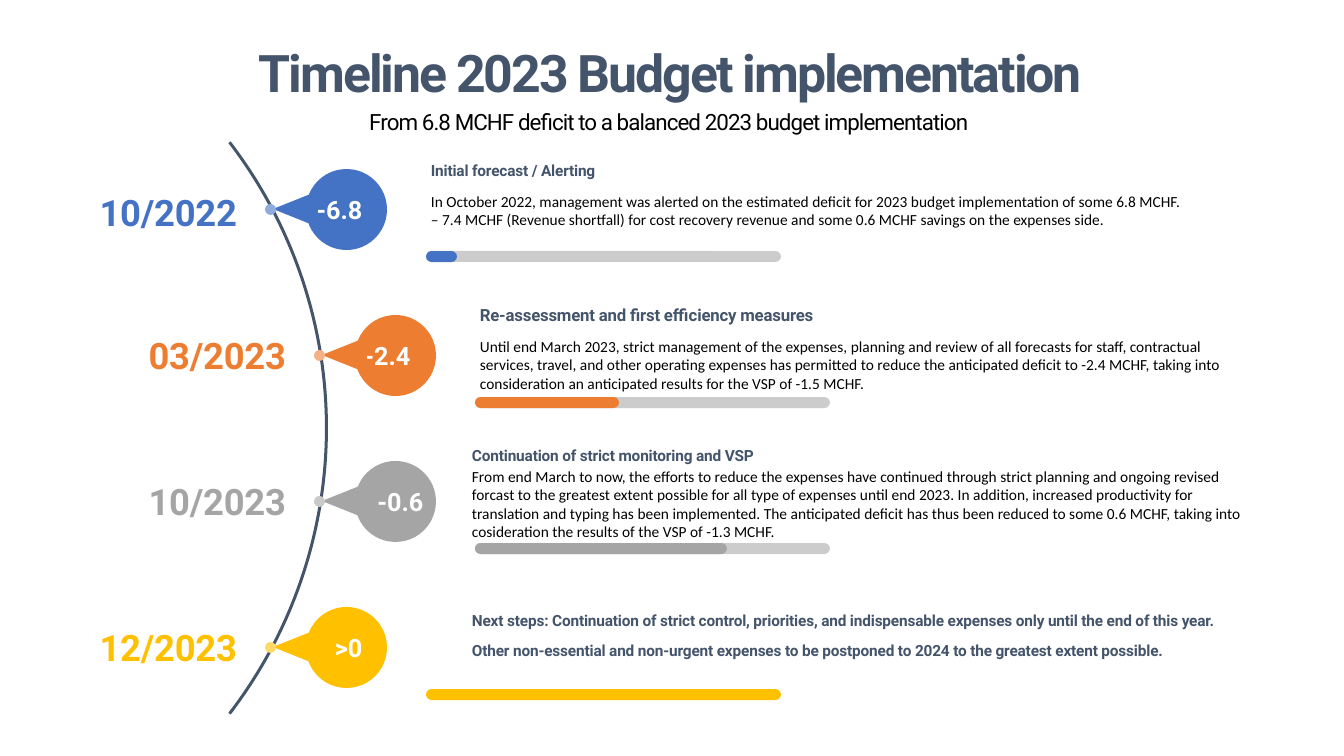
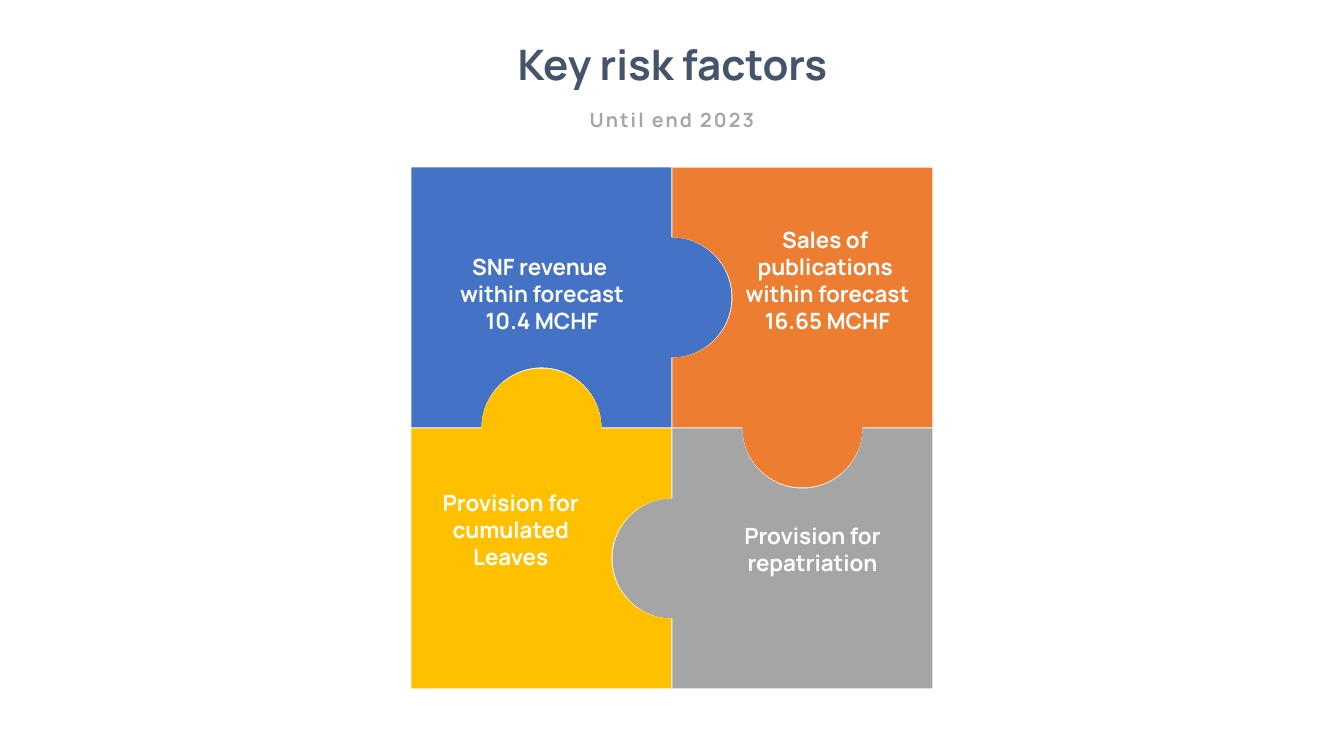
"""Builds a two-slide budget deck: a curved timeline and a risk puzzle."""
import math

from pptx import Presentation, util as u
from pptx.dml.color import RGBColor
from pptx.enum import shapes, text
from pptx.oxml import ns

SCALE = 914400 / 100.8
TITLE_ONLY = 5
COLORS = {
    "navy": "44546A", "black": "000000", "white": "FFFFFF",
    "track": "CCCCCC", "muted": "A6A6A6",
    "blue": "4472C4", "orange": "ED7D31", "gray": "A5A5A5", "gold": "FFC000",
    "light blue": "8FAADC", "light orange": "F4B183",
    "light gray": "C9C9C9", "light gold": "FFD966",
}
BAR_WIDTH = 355
FIRST_Y, ROW_STEP = 209, 146
MILESTONES = [
    {"date": "10/2022", "date_y": 185, "value": "-6.8", "shift": -7,
     "color": "blue", "dot_x": 270, "done": 31, "text_x": 421, "size": 11,
     "heading": "Initial forecast / Alerting",
     "heading_y": 147, "heading_width": 197, "body_y": 187, "body_lines": 2,
     "body": "In October 2022, management was alerted on the estimated deficit "
             "for 2023 budget implementation of some 6.8 MCHF.\n"
             "– 7.4 MCHF (Revenue shortfall) for cost recovery revenue and "
             "some 0.6 MCHF savings on the expenses side."},
    {"date": "03/2023", "date_y": 328, "value": "-2.4", "shift": -8,
     "color": "orange", "dot_x": 319, "done": 144, "text_x": 470, "size": 12,
     "heading": "Re-assessment and first efficiency measures",
     "heading_y": 292, "heading_width": 382, "body_y": 332, "body_lines": 3,
     "body": "Until end March 2023, strict management of the expenses, planning "
             "and review of all forecasts for staff, contractual services, "
             "travel, and other operating expenses has permitted to reduce the "
             "anticipated deficit to -2.4 MCHF, taking into consideration an "
             "anticipated results for the VSP of -1.5 MCHF."},
    {"date": "10/2023", "date_y": 474, "value": "-0.6", "shift": 5,
     "color": "gray", "dot_x": 319, "done": 252, "text_x": 462, "size": 11,
     "heading": "Continuation of strict monitoring and VSP",
     "heading_y": 432, "heading_width": 325, "body_y": 462, "body_lines": 4,
     "body": "From end March to now, the efforts to reduce the expenses have "
             "continued through strict planning and ongoing revised forcast to "
             "the greatest extent possible for all type of expenses until end "
             "2023. In addition, increased productivity for translation and "
             "typing has been implemented. The anticipated deficit has thus "
             "been reduced to some 0.6 MCHF, taking into cosideration the "
             "results of the VSP of -1.3 MCHF."},
    {"date": "12/2023", "date_y": 620, "value": ">0", "shift": 2,
     "color": "gold", "dot_x": 270, "done": BAR_WIDTH, "text_x": 462, "size": 11,
     "heading": "Next steps: Continuation of strict control, priorities, and "
                "indispensable expenses only until the end of this year.\n"
                "Other non-essential and non-urgent expenses to be postponed "
                "to 2024 to the greatest extent possible.",
     "heading_y": 597, "heading_width": 826, "body": None},
]
RISKS = [
    ("blue", (443, 247, 198, 92), "SNF revenue \nwithin forecast\n10.4 MCHF"),
    ("orange", (730, 220, 195, 119),
     "Sales of \npublications \nwithin forecast\n16.65 MCHF"),
    ("gray", (730, 516, 165, 65), "Provision for\nrepatriation"),
    ("gold", (428, 483, 170, 92), "Provision for \ncumulated \nLeaves "),
]


def px(length):
    """Turn px into EMU."""
    return u.Emu(round(length * SCALE))


def rgb(name):
    """Look up a named colour."""
    return RGBColor.from_string(COLORS[name])


def write(frame, words, size, color, font="Roboto", bold=True, align="LEFT",
          anchor="TOP", spacing=0, line_height=None):
    """Fill a text frame and format every run in it."""
    frame.text = words
    frame.auto_size = text.MSO_AUTO_SIZE.NONE
    frame.vertical_anchor = text.MSO_ANCHOR[anchor]
    for para in frame.paragraphs:
        para.alignment = text.PP_ALIGN[align]
        if line_height:
            para.line_spacing = u.Pt(line_height)
        for span in para.runs:
            span.font.name = font
            span.font.size = u.Pt(size)
            span.font.bold = bold
            span.font.color.rgb = rgb(color)
            if spacing:
                span.font._element.set("spc", str(round(spacing * 100)))


def add_text(page, area, words, size, color, **style):
    """Add a wrapping text box."""
    box = page.shapes.add_textbox(*map(px, area))
    box.text_frame.word_wrap = True
    write(box.text_frame, words, size, color, **style)


def add_page(deck, title, area, size, **style):
    """Add a slide with a centred navy title."""
    page = deck.slides.add_slide(deck.slide_layouts[TITLE_ONLY])
    box = page.shapes.title
    box.left, box.top, box.width, box.height = map(px, area)
    write(box.text_frame, title, size, "navy", align="CENTER", **style)
    return page


def paint(shape, fill):
    """Fill a shape and drop its line and shadow."""
    shape.shadow.inherit = False
    shape.fill.solid()
    shape.fill.fore_color.rgb = rgb(fill)
    shape.line.fill.background()
    return shape


def add_preset(page, kind, area, color):
    """Add a plain filled preset shape."""
    preset = shapes.MSO_SHAPE[kind]
    return paint(page.shapes.add_shape(preset, *map(px, area)), color)


def add_outline(page, steps, color):
    """Add a closed freeform; a step has one point for a line, three for a curve."""
    corners = [(px(x), px(y)) for step in steps for x, y in step]
    builder = page.shapes.build_freeform(*corners[0], scale=1.0)
    builder.add_line_segments(corners[1:], close=True)
    shape = paint(builder.convert_to_shape(), color)
    lines = iter(list(shape._element.iter(ns.qn("a:lnTo"))))
    for step in steps[1:]:
        segment = next(lines)
        if len(step) == 3:
            segment.tag = ns.qn("a:cubicBezTo")
            for extra in (next(lines), next(lines)):
                segment.append(extra[0])
                extra.getparent().remove(extra)


def arc(x, y, radius, start, stop, count=2):
    """List the curve steps along a circle, angles in radians."""
    turn = (stop - start) / count
    pull = 4 / 3 * math.tan(turn / 4)

    def spot(angle, lean):
        """Find a point on the circle, moved along its tangent."""
        return (x + radius * (math.cos(angle) - lean * math.sin(angle)),
                y + radius * (math.sin(angle) + lean * math.cos(angle)))

    angles = [start + turn * i for i in range(count)]
    return [(spot(a, pull), spot(a + turn, -pull), spot(a + turn, 0))
            for a in angles]


def add_bar(page, x, y, width, color):
    """Add one pill-shaped bar."""
    bar = add_preset(page, "ROUNDED_RECTANGLE", (x, y, width, 11), color)
    bar.adjustments[0] = 0.5


def add_bubble(page, x, y, item):
    """Add the value bubble, its pointer and its dot on the curve."""
    color = item["color"]
    bubble = add_preset(page, "OVAL", (x + 36, y - 40, 81, 81), color)
    frame = bubble.text_frame
    write(frame, item["value"], 18, "white", align="CENTER", anchor="MIDDLE")
    frame.word_wrap = False
    frame.margin_left = px(max(0, 2 * item["shift"]))
    frame.margin_right = px(max(0, -2 * item["shift"]))
    pointer = [(x + 3, y), (x + 48, y + 18), (x + 48, y - 18)]
    add_outline(page, [(point,) for point in pointer], color)
    add_preset(page, "OVAL", (x - 5, y - 5, 11, 11), "light " + color)


def add_milestone(page, index, item):
    """Add one row of the timeline."""
    x, y = item["dot_x"], FIRST_Y + ROW_STEP * index
    if item["done"] < BAR_WIDTH:
        add_bar(page, x + 156, y + 42, BAR_WIDTH, "track")
    add_bar(page, x + 156, y + 42, item["done"], item["color"])
    add_bubble(page, x, y, item)
    add_text(page, (x - 195, item["date_y"], 172, 54), item["date"], 26,
             item["color"], align="RIGHT", anchor="MIDDLE", spacing=-0.2)
    lines = item["heading"].count("\n") + 1
    add_text(page, (item["text_x"], item["heading_y"], item["heading_width"],
                    8 + 30 * lines),
             item["heading"], item["size"], "navy", anchor="BOTTOM",
             spacing=-0.13, line_height=21.6)
    if item["body"]:
        add_text(page, (item["text_x"], item["body_y"], 797,
                        10 + 19 * item["body_lines"]),
                 item["body"], 11, "black", font="Calibri", bold=False)


def build_timeline(deck):
    """Build the timeline slide."""
    page = add_page(deck, "Timeline 2023 Budget implementation",
                    (212, 35, 917, 73), 37, anchor="BOTTOM", spacing=-1.44,
                    line_height=44.4)
    add_text(page, (326, 103, 686, 37),
             "From 6.8 MCHF deficit to a balanced 2023 budget implementation",
             16, "black", bold=False, align="CENTER", spacing=-0.64,
             line_height=19.2)
    reach = math.asin(286 / 470)
    inner = arc(-143, 428, 468, -reach, reach, 4)
    outer = arc(-143, 428, 471, reach, -reach, 4)
    ends = [(outer[-1][-1],), (inner[-1][-1],), (outer[-1][-1],)]
    start = -143 + 468 * math.cos(reach), 428 - 468 * math.sin(reach)
    corner = -143 + 471 * math.cos(reach), 428 + 471 * math.sin(reach)
    add_outline(page, [(start,), *inner, (corner,), *outer], "navy")
    for index, item in enumerate(MILESTONES):
        add_milestone(page, index, item)


def build_risks(deck):
    """Build the puzzle slide by turning one piece about the centre."""
    page = add_page(deck, "Key risk factors", (494, 33, 357, 61), 30,
                    font="Manrope")
    add_text(page, (576, 103, 192, 34), "Until end 2023", 14, "muted",
             font="Manrope", align="CENTER", spacing=1.5)
    side, knob, gap = 260, 60, 0.5
    far, near, middle = -side - gap, -gap, -side / 2 - gap
    piece = [((far, near),), ((far, far),), ((near, far),),
             ((near, middle - knob),),
             *arc(near, middle, knob, -math.pi / 2, math.pi / 2),
             ((near, near),), ((middle + knob, near),),
             *arc(middle, near, knob, 0, -math.pi)]
    for color, *_ in RISKS:
        add_outline(page, [[(672 + x, 428 + y) for x, y in step]
                           for step in piece], color)
        piece = [[(-y, x) for x, y in step] for step in piece]
    for _, area, words in RISKS:
        add_text(page, area, words, 16, "white", font="Manrope",
                 align="CENTER", anchor="BOTTOM")


def main():
    """Build and save the deck."""
    deck = Presentation()
    deck.slide_width, deck.slide_height = px(1344), px(756)
    build_timeline(deck)
    build_risks(deck)
    deck.save("out.pptx")


if __name__ == "__main__":
    main()
